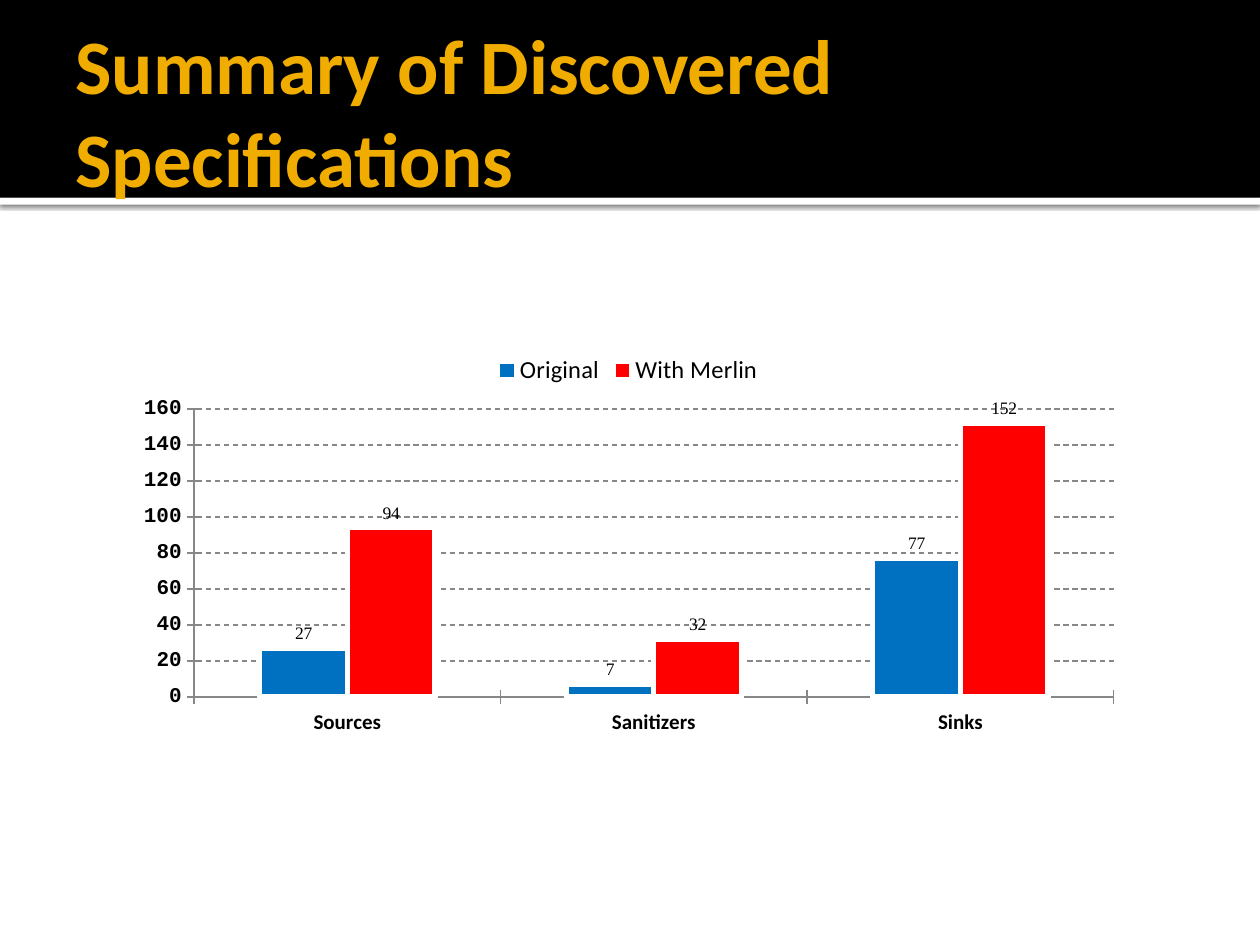
import lxml.etree
import pptx
import pptx.chart.data
import pptx.dml.color
import pptx.enum.chart
import pptx.enum.dml
import pptx.enum.shapes
import pptx.enum.text
import pptx.oxml
import pptx.oxml.ns
import pptx.util

Pt = pptx.util.Pt
SLIDE_WIDTH, SLIDE_HEIGHT = 720, 540
BAND_HEIGHT = 113
CATEGORIES = ["Sources", "Sanitizers", "Sinks"]
SERIES = [("Original", [27, 7, 77], "0070C0"), ("With Merlin", [94, 32, 152], "FF0000")]
GRAY = "878787"


def color(value):
    return pptx.dml.color.RGBColor.from_string(value)


def set_font(font, color_value, **values):
    for name, value in values.items():
        setattr(font, name, value)
    font.color.rgb = color(color_value)


def set_line(line, color_value, width):
    line.color.rgb = color(color_value)
    line.width = Pt(width)


def add_band(slide, box, fill):
    shape = slide.shapes.add_shape(
        pptx.enum.shapes.MSO_SHAPE.RECTANGLE, *map(Pt, box))
    shape.shadow.inherit = False
    shape.fill.solid()
    shape.fill.fore_color.rgb = color(fill)
    shape.line.fill.background()
    return shape


def add_shadow(shape):
    effects = shape._element.spPr.find(pptx.oxml.ns.qn("a:effectLst"))
    effects.append(pptx.oxml.parse_xml(
        f'<a:outerShdw {pptx.oxml.ns.nsdecls("a")} blurRad="{Pt(2.5)}" '
        f'dist="{Pt(0.8)}" dir="5400000" algn="tl" rotWithShape="0">'
        '<a:srgbClr val="000000"><a:alpha val="60000"/></a:srgbClr></a:outerShdw>'))


def add_header(slide, box, text):
    left, top, width, height = box
    add_shadow(add_band(slide, (left, top + height, width, 4), "FFFFFF"))
    add_band(slide, box, "000000")
    title = slide.shapes.title
    slide.shapes._spTree.append(title._element)
    placement = dict(left=left + 36, top=top + 18, width=width - 72, height=90)
    for name, value in placement.items():
        setattr(title, name, Pt(value))
    frame = title.text_frame
    frame_format = dict(
        text=text, word_wrap=True, auto_size=pptx.enum.text.MSO_AUTO_SIZE.NONE,
        vertical_anchor=pptx.enum.text.MSO_ANCHOR.MIDDLE, margin_left=Pt(7.2),
        margin_right=Pt(3.6), margin_top=Pt(3.6), margin_bottom=Pt(3.6))
    for name, value in frame_format.items():
        setattr(frame, name, value)
    paragraph = frame.paragraphs[0]
    paragraph.alignment = pptx.enum.text.PP_ALIGN.LEFT
    set_font(paragraph.runs[0].font, "F0AD00", name="Calibri", size=Pt(44), bold=True)


def set_plot_layout(chart, **fractions):
    plot_area = chart._chartSpace.chart.plotArea
    for layout in plot_area.findall(pptx.oxml.ns.qn("c:layout")):
        plot_area.remove(layout)
    settings = dict(layoutTarget="inner", xMode="edge", yMode="edge", **fractions)
    layout = lxml.etree.Element(pptx.oxml.ns.qn("c:layout"))
    manual = lxml.etree.SubElement(layout, pptx.oxml.ns.qn("c:manualLayout"))
    for name, value in settings.items():
        lxml.etree.SubElement(manual, pptx.oxml.ns.qn(f"c:{name}")).set("val", str(value))
    plot_area.insert(0, layout)


def format_axes(chart):
    for axis, font_name in ((chart.category_axis, "Calibri"), (chart.value_axis, "Courier New")):
        axis.major_tick_mark = pptx.enum.chart.XL_TICK_MARK.CROSS
        axis.minor_tick_mark = pptx.enum.chart.XL_TICK_MARK.NONE
        set_line(axis.format.line, GRAY, 0.75)
        set_font(axis.tick_labels.font, "000000", name=font_name, size=Pt(12), bold=True)
    value_axis = chart.value_axis
    for name, value in dict(minimum_scale=0, maximum_scale=160, major_unit=20,
                            has_major_gridlines=True).items():
        setattr(value_axis, name, value)
    gridline = value_axis.major_gridlines.format.line
    set_line(gridline, GRAY, 0.75)
    gridline.dash_style = pptx.enum.dml.MSO_LINE.DASH


def format_series(series, fill):
    series.format.fill.solid()
    series.format.fill.fore_color.rgb = color(fill)
    set_line(series.format.line, "FFFFFF", 3)
    labels = series.data_labels
    labels.show_value = True
    labels.position = pptx.enum.chart.XL_LABEL_POSITION.OUTSIDE_END
    set_font(labels.font, "000000", name="Times New Roman", size=Pt(10), bold=False)


def add_specification_chart(slide, box):
    data = pptx.chart.data.CategoryChartData()
    data.categories = CATEGORIES
    for name, values, _ in SERIES:
        data.add_series(name, values)
    chart = slide.shapes.add_chart(
        pptx.enum.chart.XL_CHART_TYPE.COLUMN_CLUSTERED, *map(Pt, box), data).chart
    chart.has_title = False
    set_font(chart.font, "000000", name="Calibri", size=Pt(10))
    plot = chart.plots[0]
    for name, value in dict(gap_width=150, overlap=0, vary_by_categories=False).items():
        setattr(plot, name, value)
    for series, (_, _, fill) in zip(plot.series, SERIES):
        format_series(series, fill)
    format_axes(chart)
    chart.has_legend = True
    chart.legend.position = pptx.enum.chart.XL_LEGEND_POSITION.TOP
    chart.legend.include_in_layout = False
    set_font(chart.legend.font, "000000", name="Calibri", size=Pt(14))
    set_plot_layout(chart, x=0.07, y=0.17, w=0.91, h=0.72)


def main():
    presentation = pptx.Presentation()
    presentation.slide_width = Pt(SLIDE_WIDTH)
    presentation.slide_height = Pt(SLIDE_HEIGHT)
    slide = presentation.slides.add_slide(presentation.slide_layouts.get_by_name("Title Only"))
    add_header(slide, (0, 0, SLIDE_WIDTH, BAND_HEIGHT), "Summary of Discovered Specifications")
    add_specification_chart(slide, (70.5, 195, 577.5, 228.5))
    presentation.save("out.pptx")


if __name__ == "__main__":
    main()
